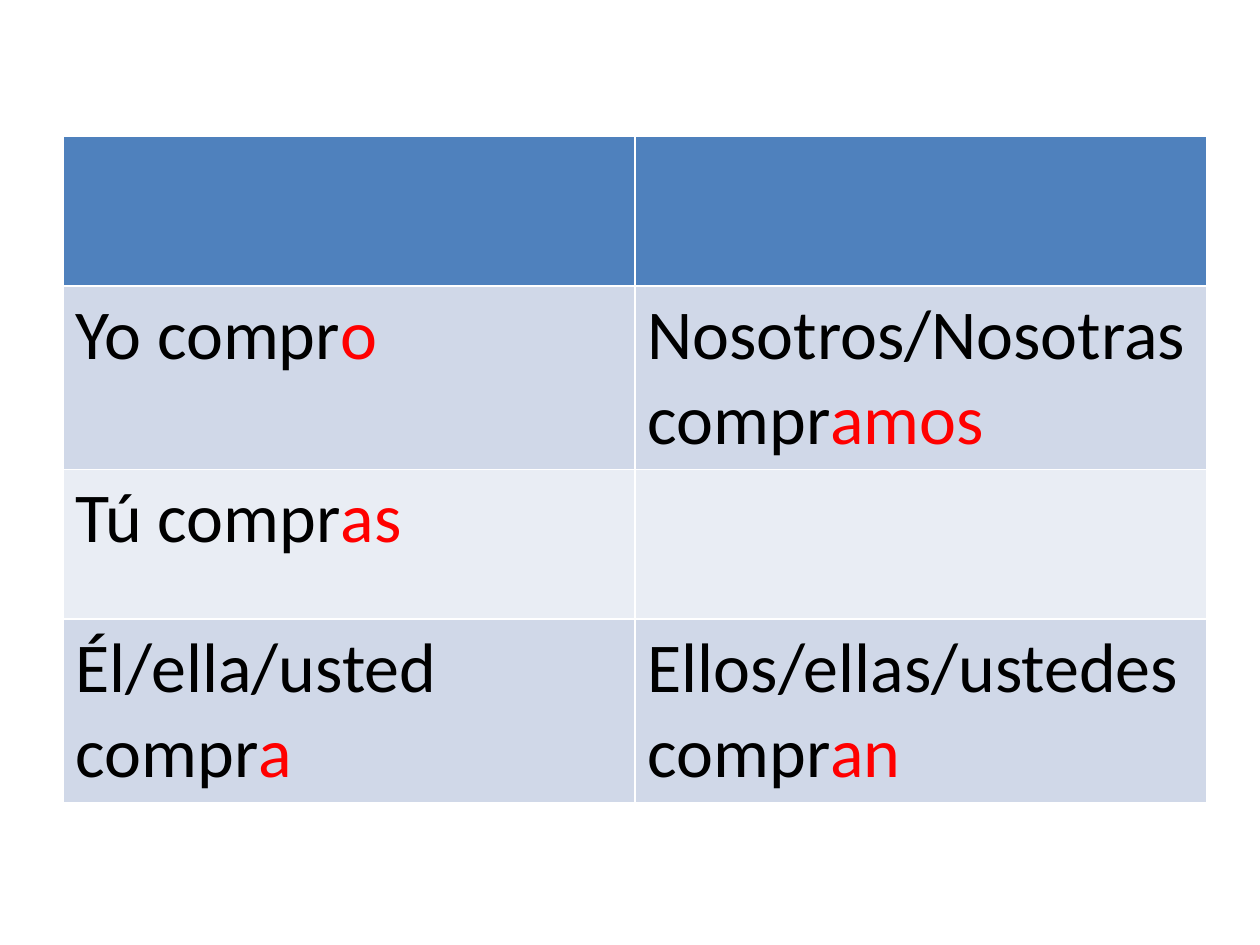
from pptx import Presentation
from pptx.util import Cm, Pt
from pptx.dml.color import RGBColor

# Content: (stem, ending) per cell, None where a cell is empty
ROWS = [
    [None, None],
    [("Yo compr", "o"), ("Nosotros/Nosotras compr", "amos")],
    [("Tú compr", "as"), None],
    [("Él/ella/usted compr", "a"), ("Ellos/ellas/ustedes compr", "an")],
]
HEAD, BANDS = "4F81BD", ("D0D8E8", "E9EDF4")
LEFT, TOP, COL, ROW = 1.27, 2.75, 11.53, 3.02


def color(code):
    return RGBColor.from_string(code)


def write(para, text, size=40, font="Calibri", ink="000000"):
    run = para.add_run()
    run.text = text
    run.font.size = Pt(size)
    run.font.name = font
    run.font.color.rgb = color(ink)


def main():
    deck = Presentation()
    deck.slide_width, deck.slide_height = Cm(25.4), Cm(19.05)
    slide = deck.slides.add_slide(deck.slide_layouts[6])

    # Verb table; its default style draws the white rules
    count, wide = len(ROWS), len(ROWS[0])
    table = slide.shapes.add_table(
        count, wide, Cm(LEFT), Cm(TOP), Cm(COL * wide), Cm(ROW * count)).table
    for col in table.columns:
        col.width = Cm(COL)

    for i, row in enumerate(ROWS):
        table.rows[i].height = Cm(ROW)
        for j, verb in enumerate(row):
            cell = table.cell(i, j)
            cell.fill.solid()
            cell.fill.fore_color.rgb = color(BANDS[(i - 1) % 2] if i else HEAD)
            if verb:
                para = cell.text_frame.paragraphs[0]
                stem, ending = verb
                write(para, stem)
                write(para, ending, ink="FF0000")

    deck.save("out.pptx")


if __name__ == "__main__":
    main()
